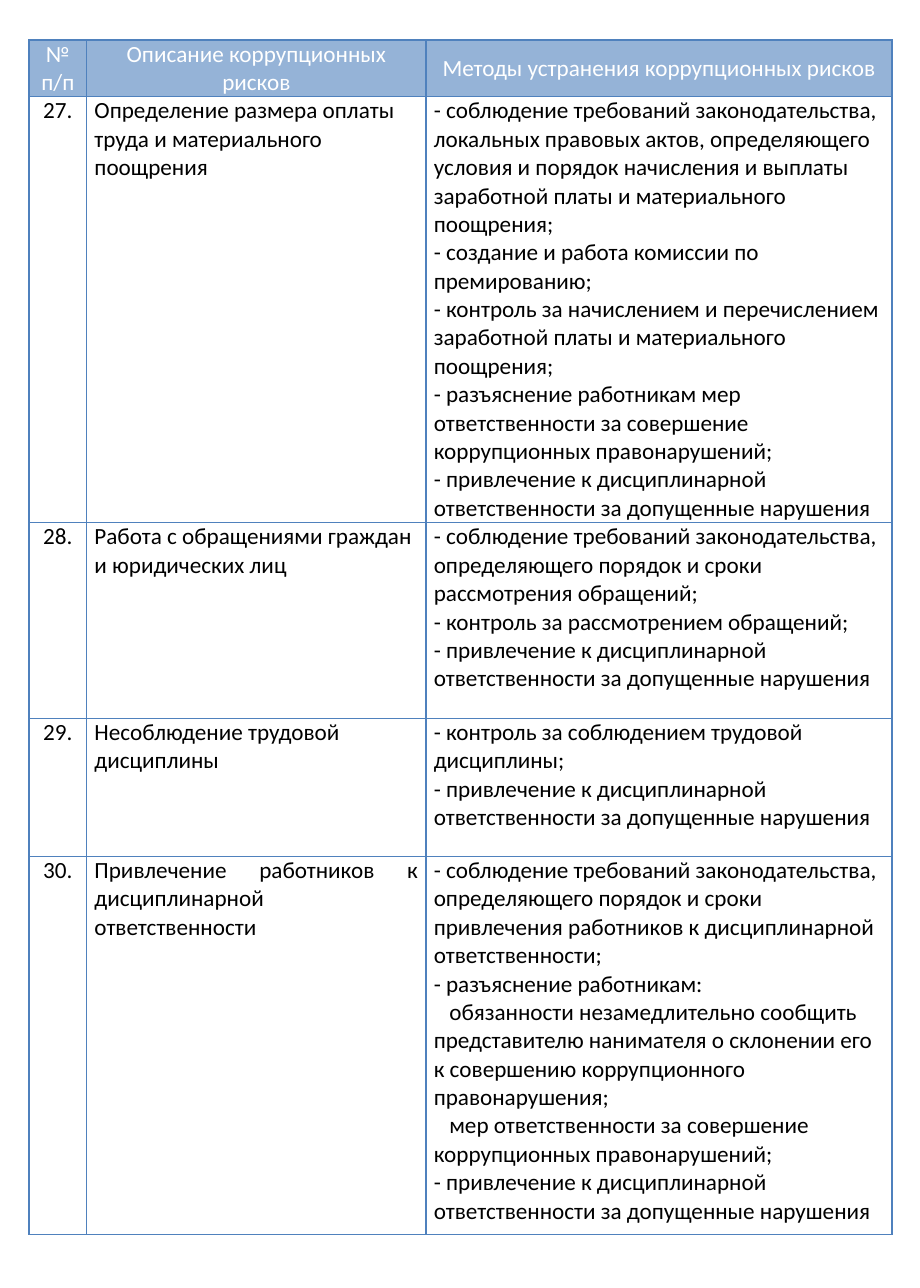
from dataclasses import dataclass

from lxml import etree
from pptx import Presentation
from pptx.dml.color import RGBColor
from pptx.enum.text import MSO_ANCHOR, PP_ALIGN
from pptx.oxml.ns import qn
from pptx.util import Inches, Pt

LEFT, CENTER, JUSTIFY = PP_ALIGN.LEFT, PP_ALIGN.CENTER, PP_ALIGN.JUSTIFY
TOP, MIDDLE = MSO_ANCHOR.TOP, MSO_ANCHOR.MIDDLE
BLANK_LAYOUT = 6


@dataclass(frozen=True)
class Theme:
    font: str = "Calibri"
    size: int = 15
    text: str = "000000"
    header_text: str = "FFFFFF"
    header_fill: str = "95B3D7"
    border: str = "4F81BD"
    border_width: int = 1
    sub_item_indent: float = 0.14


class RiskPage:
    def __init__(self, deck, theme):
        self.theme = theme
        self.slide = deck.slides.add_slide(deck.slide_layouts[BLANK_LAYOUT])

    def add_table(self, left, top, widths, heights):
        frame = self.slide.shapes.add_table(
            len(heights), len(widths), Inches(left), Inches(top),
            Inches(sum(widths)), Inches(sum(heights)))
        table = frame.table
        table.first_row = table.horz_banding = False
        for column, width in zip(table.columns, widths):
            column.width = Inches(width)
        for row, height in zip(table.rows, heights):
            row.height = Inches(height)
        return table

    def add_borders(self, cell):
        properties = cell._tc.get_or_add_tcPr()
        for side in ("a:lnL", "a:lnR", "a:lnT", "a:lnB"):
            line = etree.SubElement(
                properties, qn(side), w=str(Pt(self.theme.border_width)))
            fill = etree.SubElement(line, qn("a:solidFill"))
            etree.SubElement(fill, qn("a:srgbClr"), val=self.theme.border)

    def fill_cell(self, cell, lines, align, inset, header=False):
        theme = self.theme
        cell_format = {
            "margin_left": Inches(inset), "margin_right": Inches(inset),
            "margin_top": 0, "margin_bottom": 0,
            "vertical_anchor": MIDDLE if header else TOP,
        }
        for name, value in cell_format.items():
            setattr(cell, name, value)
        self.add_borders(cell)
        if header:
            cell.fill.solid()
            cell.fill.fore_color.rgb = RGBColor.from_string(theme.header_fill)
        else:
            cell.fill.background()
        color = theme.header_text if header else theme.text
        for index, line in enumerate(lines):
            frame = cell.text_frame
            para = frame.add_paragraph() if index else frame.paragraphs[0]
            para.alignment = align
            if line in SUB_ITEMS:
                indent = Inches(theme.sub_item_indent)
                para._p.get_or_add_pPr().set("indent", str(indent))
            span = para.add_run()
            span.text = line
            for name, value in {"name": theme.font, "size": Pt(theme.size)}.items():
                setattr(span.font, name, value)
            span.font.color.rgb = RGBColor.from_string(color)


HEADERS = ["№ п/п", "Описание коррупционных рисков", "Методы устранения коррупционных рисков"]
PENALTY = "- привлечение к дисциплинарной ответственности за допущенные нарушения"
SUB_ITEMS = [
    "обязанности незамедлительно сообщить представителю нанимателя о склонении его "
    "к совершению коррупционного правонарушения;",
    "мер ответственности за совершение коррупционных правонарушений;",
]
FIRST_NUMBER = 27
RISKS = [
    ("Определение размера оплаты труда и материального поощрения", LEFT, [
        "- соблюдение требований законодательства, локальных правовых актов, определяющего "
        "условия и порядок начисления и выплаты заработной платы и материального поощрения;",
        "- создание и работа комиссии по премированию;",
        "- контроль за начислением и перечислением заработной платы и материального поощрения;",
        "- разъяснение работникам мер ответственности за совершение коррупционных правонарушений;",
    ]),
    ("Работа с обращениями граждан и юридических лиц", LEFT, [
        "- соблюдение требований законодательства, определяющего порядок и сроки "
        "рассмотрения обращений;",
        "- контроль за рассмотрением обращений;",
    ]),
    ("Несоблюдение трудовой дисциплины", LEFT, [
        "- контроль за соблюдением трудовой дисциплины;",
    ]),
    ("Привлечение работников к дисциплинарной ответственности", JUSTIFY, [
        "- соблюдение требований законодательства, определяющего порядок и сроки "
        "привлечения работников к дисциплинарной ответственности;",
        "- разъяснение работникам:",
        *SUB_ITEMS,
    ]),
]


def main():
    deck = Presentation()
    deck.slide_width, deck.slide_height = Inches(8.27), Inches(11.58)
    page = RiskPage(deck, Theme())
    table = page.add_table(0.26, 0.36, [0.52, 3.05, 4.19], [0.51, 3.83, 1.76, 1.24, 3.4])
    for column, title in enumerate(HEADERS):
        page.fill_cell(table.cell(0, column), [title], CENTER, 0.09, header=True)
    for row, (risk, align, methods) in enumerate(RISKS, start=1):
        number = f"{FIRST_NUMBER + row - 1}."
        page.fill_cell(table.cell(row, 0), [number], CENTER, 0.09)
        page.fill_cell(table.cell(row, 1), [risk], align, 0.07)
        page.fill_cell(table.cell(row, 2), [*methods, PENALTY], LEFT, 0.07)
    deck.save("out.pptx")


if __name__ == "__main__":
    main()
